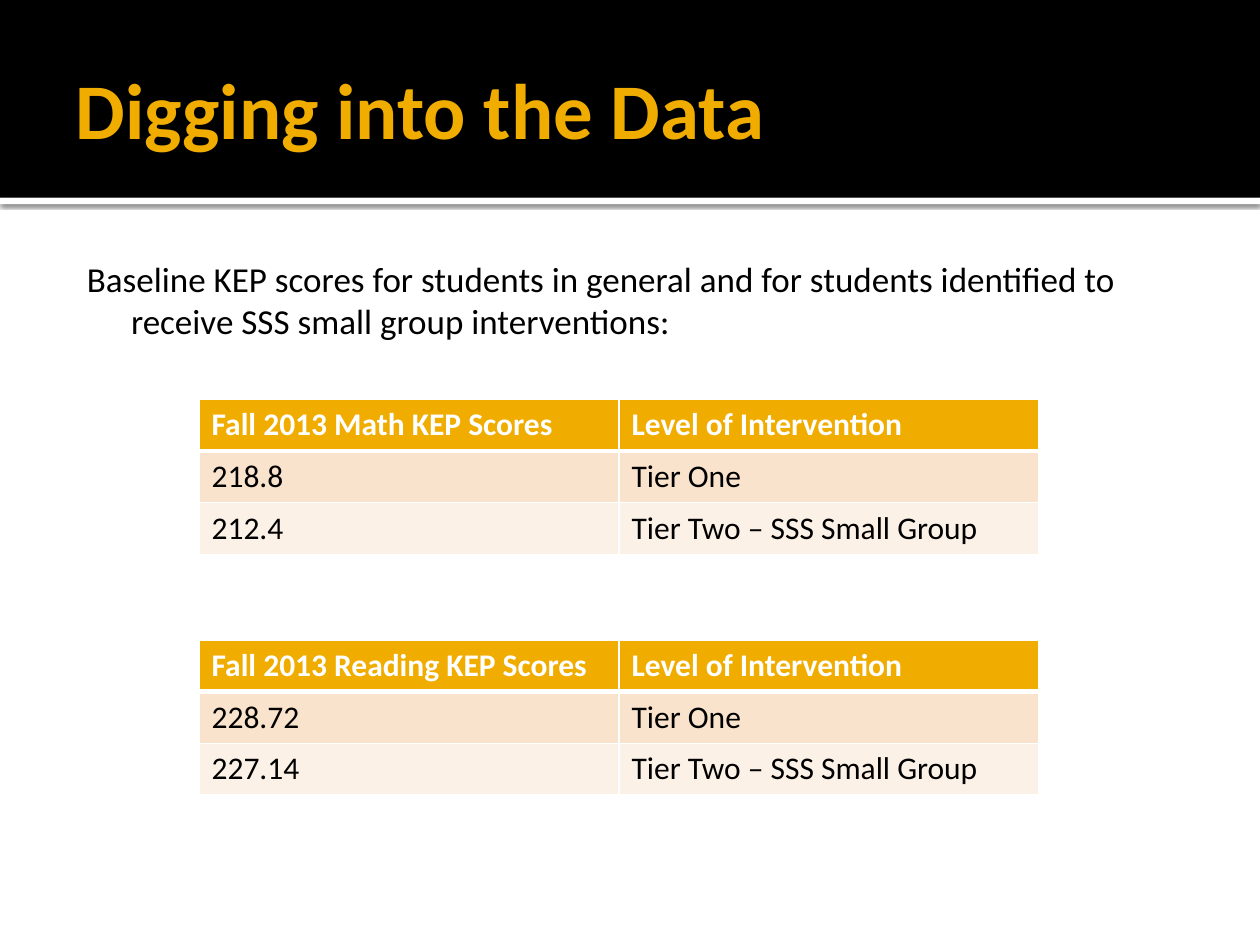
from lxml import etree
from pptx import Presentation
from pptx import util as u
from pptx.dml.color import RGBColor
from pptx.enum import shapes, text
from pptx.oxml import parse_xml
from pptx.oxml.ns import nsdecls, qn

HUES = {"gold": "F0AD00", "black": "000000", "white": "FFFFFF",
        "peach": "F9E3CC", "cream": "FCF1E7"}
WIDE, HIGH = 10, 7.5
BAND = 1.57
ROW = 0.41
LEVELS = ["Tier One", "Tier Two – SSS Small Group"]
SHADE = (f'<a:effectLst {nsdecls("a")}><a:outerShdw blurRad="31750" dist="10160" '
         'dir="5400000" algn="tl" rotWithShape="0"><a:srgbClr val="000000">'
         '<a:alpha val="60000"/></a:srgbClr></a:outerShdw></a:effectLst>')
RULE = (f'<a:lnB {nsdecls("a")} w="38100"><a:solidFill>'
        f'<a:srgbClr val="{HUES["white"]}"/></a:solidFill></a:lnB>')


def hue(name):
    return RGBColor.from_string(HUES[name])


def inch(box):
    return [u.Inches(n) for n in box]


def apply(item, **values):
    for key, value in values.items():
        setattr(item, key, value)


def style(para, size, tint, bold=False):
    apply(para.font, size=u.Pt(size), name="Calibri", bold=bold)
    para.font.color.rgb = hue(tint)


def place(holder, box, words, pads, anchor):
    apply(holder, **dict(zip(("left", "top", "width", "height"), inch(box))))
    frame = holder.text_frame
    frame.text = words
    sides = ("margin_left", "margin_top", "margin_right", "margin_bottom")
    apply(frame, word_wrap=True, auto_size=text.MSO_AUTO_SIZE.NONE,
          vertical_anchor=anchor, **dict(zip(sides, inch(pads))))
    para = frame.paragraphs[0]
    apply(para, alignment=text.PP_ALIGN.LEFT, line_spacing=1.0, space_before=u.Pt(0))
    return para


def bar(slide, box, tint, rank):
    shape = slide.shapes.add_shape(shapes.MSO_SHAPE.RECTANGLE, *inch(box))
    shape.shadow.inherit = False
    shape.fill.solid()
    shape.fill.fore_color.rgb = hue(tint)
    shape.line.fill.background()
    slide.shapes._spTree.insert(2 + rank, shape._element)
    return shape


def header(slide, box, words):
    left, top, width, height = box
    edge = bar(slide, (left, top + height, width, 0.05), "white", 0)
    props = edge._element.spPr
    props.replace(props.find(qn("a:effectLst")), parse_xml(SHADE))
    bar(slide, box, "black", 1)
    area = (left + 0.05 * width, top + 0.17, 0.9 * width, 1.37)
    para = place(slide.shapes.title, area, words, (0.1, 0.05, 0.05, 0.05),
                 text.MSO_ANCHOR.MIDDLE)
    style(para, 45, "gold", True)


def intro(slide, box, words):
    para = place(slide.placeholders[1], box, words, (0.06, 0.1, 0.1, 0.05),
                 text.MSO_ANCHOR.TOP)
    style(para, 20, "black")
    props = para._p.get_or_add_pPr()
    props.set("marL", str(u.Inches(0.48)))
    props.set("indent", str(u.Inches(-0.35)))
    etree.SubElement(props, qn("a:buNone"))


def scores(slide, box, topic, marks):
    rows = [(f"Fall 2013 {topic} KEP Scores", "Level of Intervention"),
            *zip(marks, LEVELS)]
    looks = [("gold", "white", True), ("peach", "black", False),
             ("cream", "black", False)]
    grid = slide.shapes.add_table(len(rows), 2, *inch(box)).table
    for r, (row, (fill, tint, bold)) in enumerate(zip(rows, looks)):
        for c, words in enumerate(row):
            cell = grid.cell(r, c)
            cell.text = words
            cell.fill.solid()
            cell.fill.fore_color.rgb = hue(fill)
            style(cell.text_frame.paragraphs[0], 18, tint, bold)
            if r == 0:
                cell._tc.get_or_add_tcPr().insert(0, parse_xml(RULE))


def main():
    deck = Presentation()
    apply(deck, slide_width=u.Inches(WIDE), slide_height=u.Inches(HIGH))
    slide = deck.slides.add_slide(deck.slide_layouts[1])
    header(slide, (0, 0, WIDE, BAND), "Digging into the Data")
    intro(slide, (0.05 * WIDE, 1.94, 0.9 * WIDE, 5.06),
          "Baseline KEP scores for students in general and for students "
          "identified to receive SSS small group interventions:")
    tables = [(3.17, "Math", ("218.8", "212.4")),
              (5.08, "Reading", ("228.72", "227.14"))]
    for top, topic, marks in tables:
        scores(slide, (1.58, top, WIDE * 2 / 3, 3 * ROW), topic, marks)
    deck.save("out.pptx")


if __name__ == "__main__":
    main()
